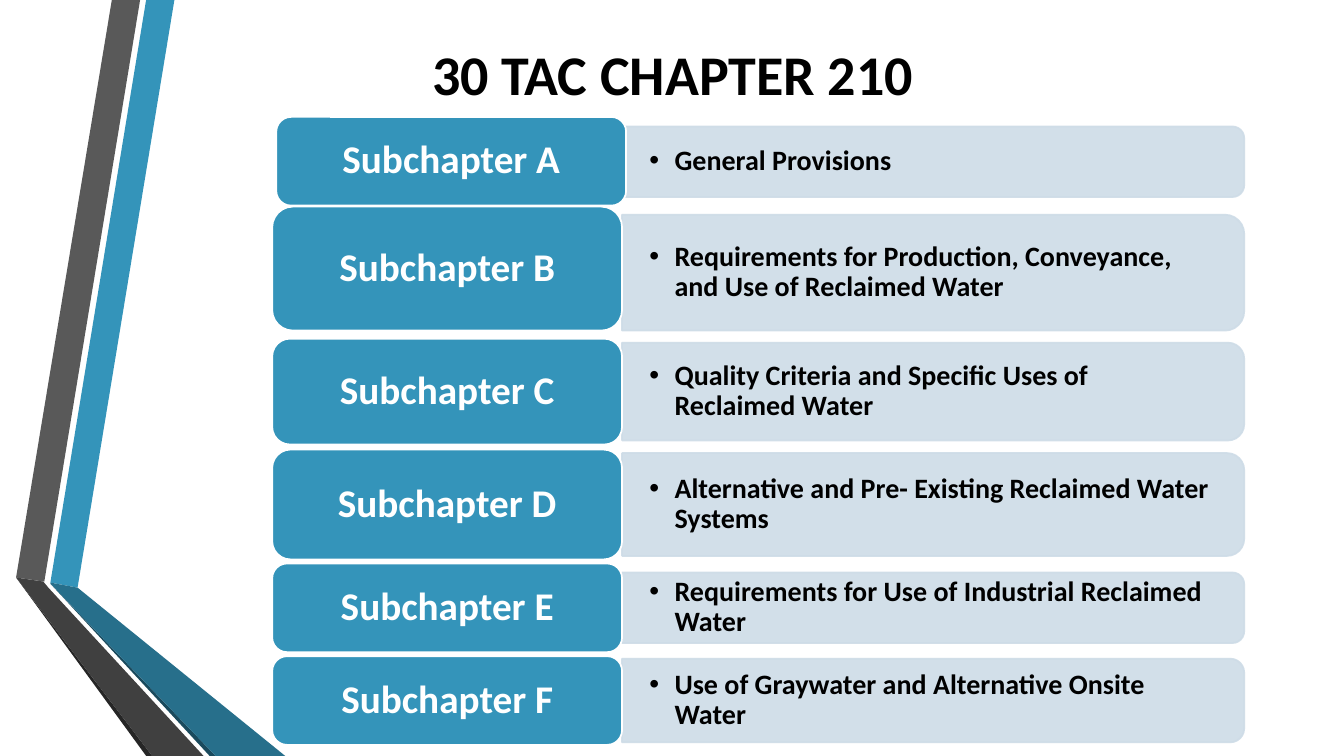
from lxml import etree
from pptx import Presentation
from pptx.dml.color import RGBColor
from pptx.enum.shapes import MSO_SHAPE as Shape
from pptx.enum.text import MSO_ANCHOR as Anchor, PP_ALIGN as Align
from pptx.oxml.ns import qn
from pptx.util import Inches, Pt

# The slide is a grid of 1333 columns by 750 rows
CELL = Inches(0.01)
COLS, ROWS = 1333, 750

FONT = "Calibri"
BLACK = RGBColor(0x00, 0x00, 0x00)
WHITE = RGBColor(0xFF, 0xFF, 0xFF)
BLUE = RGBColor(0x34, 0x94, 0xBA)
BLUE_DARK = RGBColor(0x27, 0x6F, 0x8B)
BLUE_DEEP = RGBColor(0x1A, 0x4A, 0x5D)
GREY = RGBColor(0x59, 0x59, 0x59)
GREY_DARK = RGBColor(0x40, 0x40, 0x40)
GREY_DEEP = RGBColor(0x26, 0x26, 0x26)
PALE = RGBColor(0xCE, 0xDC, 0xE7)

RIBBONS = [
    (BLUE, [(50, 578), (77, 583), (173, 0), (145, 0)]),
    (GREY, [(139, 0), (111, 0), (16, 573), (44, 577)]),
    (GREY_DEEP, [(16, 573), (145, ROWS), (151, ROWS)]),
    (BLUE_DEEP, [(50, 579), (208, ROWS), (214, ROWS)]),
    (BLUE_DARK, [(50, 578), (50, 579), (214, ROWS), (283, ROWS), (77, 583)]),
    (GREY_DARK, [(16, 573), (151, ROWS), (202, ROWS), (48, 583), (43, 577)]),
]

LABEL_W = 347
BAR_LEFT, BAR_W = 617, 617

# name, label left, label middle, label height, bar middle, bar height, detail
SUBCHAPTERS = [
    ("Subchapter A", 274, 160, 88, 160.5, 70, "General Provisions"),
    ("Subchapter B", 270, 266.5, 123, 270.5, 115,
     "Requirements for Production, Conveyance, and Use of Reclaimed Water"),
    ("Subchapter C", 270, 388.5, 105, 388.5, 97,
     "Quality Criteria and Specific Uses of Reclaimed Water"),
    ("Subchapter D", 270, 500.5, 109, 500.5, 102,
     "Alternative and Pre- Existing Reclaimed Water Systems"),
    ("Subchapter E", 270, 603, 88, 603, 70,
     "Requirements for Use of Industrial Reclaimed Water"),
    ("Subchapter F", 270, 695, 88, 695, 83,
     "Use of Graywater and Alternative Onsite Water"),
]


def cells(*counts):
    return [int(n * CELL) for n in counts]


def paint(sp, fill, line=None):
    sp.shadow.inherit = False
    sp.fill.solid()
    sp.fill.fore_color.rgb = fill
    if line is None:
        sp.line.fill.background()
    else:
        sp.line.color.rgb = line
        sp.line.width = Pt(1.25)


def write(sp, text, size, color, align, pad=(0.1, 0.05), spacing=0.9):
    tf = sp.text_frame
    tf.text = text
    tf.word_wrap = True
    tf.vertical_anchor = Anchor.MIDDLE
    tf.margin_left = tf.margin_right = Inches(pad[0])
    tf.margin_top = tf.margin_bottom = Inches(pad[1])
    p = tf.paragraphs[0]
    p.alignment = align
    p.line_spacing = spacing
    font = p.runs[0].font
    font.name, font.size, font.bold = FONT, Pt(size), True
    font.color.rgb = color
    return p


def add_bullet(p):
    pPr = p._p.get_or_add_pPr()
    indent = Inches(0.25)
    pPr.set("marL", str(indent))
    pPr.set("indent", str(-indent))
    etree.SubElement(pPr, qn("a:buFont")).set("typeface", "Arial")
    etree.SubElement(pPr, qn("a:buChar")).set("char", "•")


def add_ribbon(s, color, points):
    builder = s.shapes.build_freeform(*points[0], scale=CELL)
    builder.add_line_segments(points[1:], close=True)
    paint(builder.convert_to_shape(), color)


def add_bar(s, middle, height):
    """Draw a bar rounded on its right, as a upright tab turned a quarter."""
    left = BAR_LEFT + (BAR_W - height) / 2
    sp = s.shapes.add_shape(Shape.ROUND_2_SAME_RECTANGLE,
                            *cells(left, middle - BAR_W / 2, height, BAR_W))
    sp.rotation = 90
    paint(sp, PALE, PALE)
    for color in sp._element.spPr.iter(qn("a:srgbClr")):
        etree.SubElement(color, qn("a:alpha")).set("val", "90000")


def add_detail(s, middle, height, text):
    sp = s.shapes.add_textbox(
        *cells(BAR_LEFT, middle - height / 2, BAR_W - 5, height))
    add_bullet(write(sp, text, 20, BLACK, Align.LEFT, (0.27, 0.14)))


def add_label(s, left, middle, height, text):
    sp = s.shapes.add_shape(Shape.ROUNDED_RECTANGLE,
                            *cells(left, middle - height / 2, LABEL_W, height))
    paint(sp, BLUE, WHITE)
    write(sp, text, 28, WHITE, Align.CENTER, (0.12, 0.06))


def set_title(s, text):
    title = s.shapes.title
    title.left, title.top, title.width, title.height = cells(217, 30, 900, 86)
    write(title, text, 40, BLACK, Align.CENTER, spacing=1.0)


def main():
    prs = Presentation()
    prs.slide_width, prs.slide_height = cells(COLS, ROWS)
    s = prs.slides.add_slide(prs.slide_layouts[5])
    for color, points in RIBBONS:
        add_ribbon(s, color, points)
    set_title(s, "30 TAC CHAPTER 210")
    for name, left, middle, height, bar_middle, bar_height, detail in SUBCHAPTERS:
        add_bar(s, bar_middle, bar_height)
        add_detail(s, bar_middle, bar_height, detail)
        add_label(s, left, middle, height, name)
    prs.save("out.pptx")


if __name__ == "__main__":
    main()
